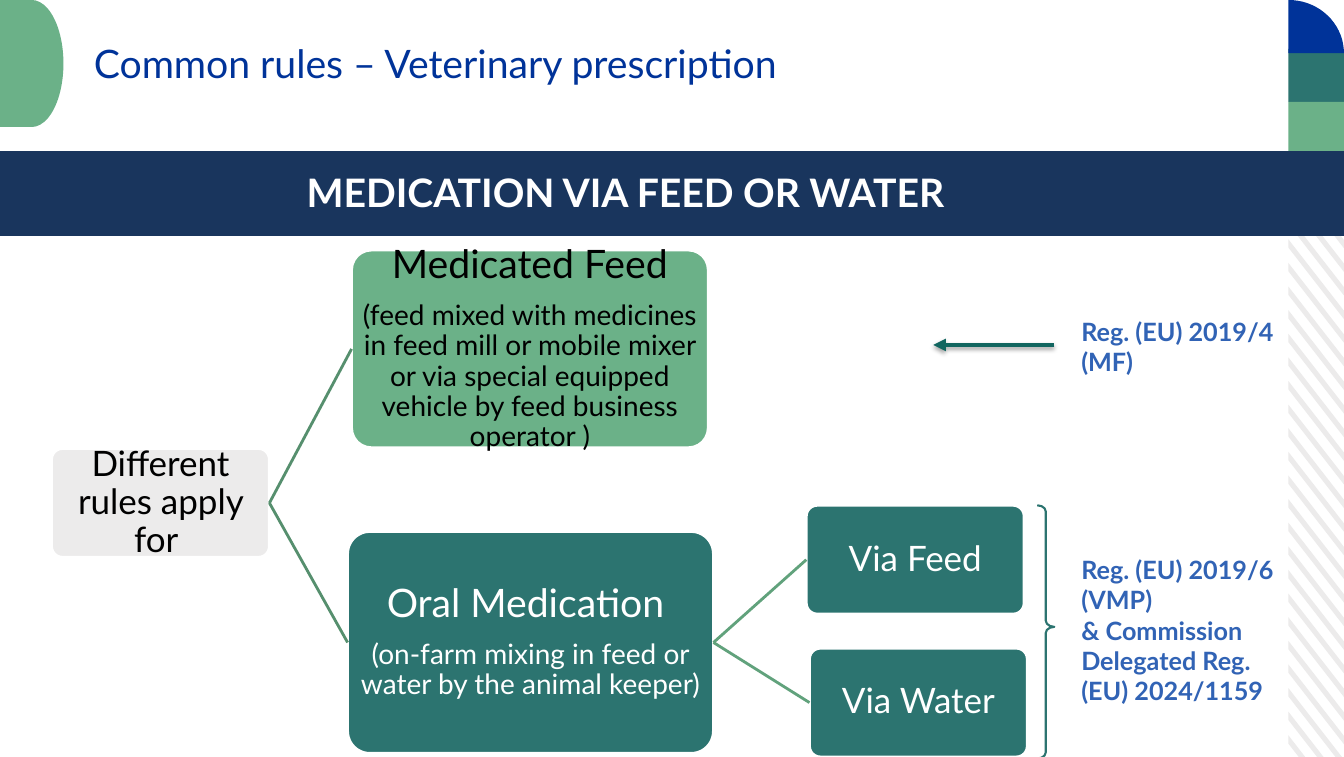
import math
from dataclasses import dataclass

from lxml import etree
from pptx import Presentation
from pptx import util as u
from pptx.dml.color import RGBColor
from pptx.enum import shapes, text
from pptx.oxml import parse_xml
from pptx.oxml.ns import nsdecls, qn

NAVY, BLUE, LINK_BLUE = "19355D", "003399", "3163B5"
TEAL, GREEN, GREY = "2C7470", "6BB188", "ECEBEB"
WHITE, BLACK = "FFFFFF", "000000"
WIDTH, HEIGHT = 33.87, 19.07
BANNER_TOP = 3.81
STRIP_LEFT, STRIP_WIDTH, TILE = 32.47, 1.4, 1.34
PRESET = shapes.MSO_SHAPE

Box = tuple[float, float, float, float]
Point = tuple[float, float]


@dataclass
class Node:
    box: Box
    fill: str
    ink: str
    lines: list[tuple[str, int]]


@dataclass
class Link:
    start: str
    end: str
    colour: str


@dataclass
class Label:
    box: Box
    lines: list[str]
    size: int
    colour: str
    align: text.PP_ALIGN = text.PP_ALIGN.LEFT


NODES = {
    "rules": Node((1.3, 11.3, 5.49, 2.74), GREY, BLACK,
                  [("Different rules apply for ", 25)]),
    "medicated": Node((8.86, 6.3, 8.99, 4.98), GREEN, BLACK, [
        ("Medicated Feed", 28),
        ("(feed mixed with medicines in feed mill or mobile mixer or via "
         "special equipped vehicle by feed business operator )", 20)]),
    "oral": Node((8.76, 13.39, 9.22, 5.59), TEAL, WHITE, [
        ("Oral Medication ", 28),
        ("(on-farm mixing in feed or water by the animal keeper)", 20)]),
    "feed": Node((20.32, 12.73, 5.49, 2.74), TEAL, WHITE, [("Via Feed", 25)]),
    "water": Node((20.4, 16.33, 5.49, 2.74), TEAL, WHITE, [("Via Water", 25)]),
}
LINKS = [
    Link("rules", "medicated", "568F6E"),
    Link("rules", "oral", "568F6E"),
    Link("oral", "feed", "61A27C"),
    Link("oral", "water", "61A27C"),
]
LABELS = [
    Label((5.18, 4.11, 21.16, 1.65), ["MEDICATION VIA FEED OR WATER"], 28, WHITE,
          text.PP_ALIGN.CENTER),
    Label((27, 7.85, 5.82, 1.8), ["Reg. (EU) 2019/4", "(MF)"], 18, LINK_BLUE),
    Label((27, 13.84, 5.46, 4.11),
          ["Reg. (EU) 2019/6 (VMP)", "& Commission Delegated Reg. (EU) 2024/1159"],
          18, LINK_BLUE),
]


def cm(values) -> list[u.Cm]:
    return [u.Cm(value) for value in values]


def apply(target, formats: dict) -> None:
    for name, value in formats.items():
        setattr(target, name, value)


def paint(fill, colour: str) -> None:
    fill.solid()
    fill.fore_color.rgb = RGBColor.from_string(colour)


def outline(line, colour: str, width: float) -> None:
    paint(line.fill, colour)
    line.width = u.Pt(width)


def write(frame, lines: list[tuple[str, int]], colour: str, align,
          bold: bool = False, spacing: dict | None = None) -> None:
    frame.word_wrap = True
    for index, (words, size) in enumerate(lines):
        paragraph = frame.add_paragraph() if index else frame.paragraphs[0]
        apply(paragraph, {"alignment": align, **(spacing or {})})
        if index == 0:
            paragraph.space_before = u.Pt(0)
        run = paragraph.add_run()
        run.text = words
        apply(run.font, {"name": "Lato", "size": u.Pt(size), "bold": bold})
        paint(run.font.fill, colour)


def preset(slide, kind, box: Box, fill: str | None, adjustments=()):
    part = slide.shapes.add_shape(kind, *cm(box))
    part.shadow.inherit = False
    for index, value in enumerate(adjustments):
        part.adjustments[index] = value
    if fill:
        paint(part.fill, fill)
    else:
        part.fill.background()
    part.line.fill.background()
    return part


def polygons(slide, contours: list[list[Point]], colour: str) -> None:
    builder = slide.shapes.build_freeform(*cm(contours[0][0]))
    for index, contour in enumerate(contours):
        if index:
            builder.move_to(*cm(contour[0]))
        builder.add_line_segments([tuple(cm(point)) for point in contour[1:]])
    part = builder.convert_to_shape()
    part.shadow.inherit = False
    paint(part.fill, colour)
    part.line.fill.background()


def stripe_edge(left_y: float) -> list[Point]:
    slope = 1.8 / STRIP_WIDTH
    top = BANNER_TOP + 0.1
    spans = [max((top - left_y) / slope, 0),
             min((HEIGHT - left_y) / slope, STRIP_WIDTH)]
    return [(STRIP_LEFT + span, left_y + slope * span) for span in spans]


def decorate(slide) -> None:
    starts = [2.46 + 0.595 * index for index in range(28)]
    polygons(slide, [stripe_edge(y) + stripe_edge(y + 0.21)[::-1] for y in starts], GREY)
    for row, colour in enumerate([TEAL, GREEN]):
        preset(slide, PRESET.RECTANGLE,
               (STRIP_LEFT, 1.23 + TILE * row, STRIP_WIDTH, TILE), colour)
    angles = [math.radians(degree) for degree in range(0, 91, 5)]
    arc = [(STRIP_LEFT + STRIP_WIDTH * math.sin(angle), TILE * (1 - math.cos(angle)))
           for angle in angles]
    polygons(slide, [[(STRIP_LEFT, TILE)] + arc], BLUE)
    preset(slide, PRESET.FLOWCHART_DELAY, (0, 0, 1.6, 3.2), GREEN)
    preset(slide, PRESET.ROUNDED_RECTANGLE, (-0.05, BANNER_TOP, 33.93, 2.13), NAVY, [0])


def draw_node(slide, node: Node):
    part = preset(slide, PRESET.ROUNDED_RECTANGLE, node.box, node.fill, [0.1])
    outline(part.line, WHITE, 2)
    sides = ("left", "top", "right", "bottom")
    apply(part.text_frame, {f"margin_{side}": u.Cm(0.05) for side in sides})
    part.text_frame.vertical_anchor = text.MSO_ANCHOR.MIDDLE
    write(part.text_frame, node.lines, node.ink, text.PP_ALIGN.CENTER,
          spacing={"line_spacing": 0.9, "space_before": u.Pt(10)})
    return part


def draw_line(slide, start: Point, end: Point, colour: str, width: float):
    line = slide.shapes.add_connector(shapes.MSO_CONNECTOR.STRAIGHT, *cm(start + end))
    outline(line.line, colour, width)
    effects = etree.SubElement(line._element.spPr, qn("a:effectLst"))
    return line, effects


def draw_arrow(slide) -> None:
    arrow, effects = draw_line(slide, (26.57, 8.69), (23.52, 8.69), "126660", 3)
    etree.SubElement(arrow.line._get_or_add_ln(), qn("a:tailEnd"), type="triangle")
    effects.append(parse_xml(
        f'<a:outerShdw {nsdecls("a")} blurRad="40000" dist="23000" dir="5400000" '
        'rotWithShape="0"><a:srgbClr val="000000"><a:alpha val="35000"/>'
        '</a:srgbClr></a:outerShdw>'))


def main() -> None:
    deck = Presentation()
    apply(deck, {"slide_width": u.Cm(WIDTH), "slide_height": u.Cm(HEIGHT)})
    slide = deck.slides.add_slide(deck.slide_layouts[5])
    decorate(slide)

    title = slide.shapes.title
    apply(title, dict(zip(("left", "top", "width", "height"),
                          cm((2.11, 0.86, 22.25, 1.47)))))
    apply(title.text_frame, {"auto_size": text.MSO_AUTO_SIZE.NONE,
                             "vertical_anchor": text.MSO_ANCHOR.TOP})
    write(title.text_frame, [("Common rules – Veterinary prescription", 28)], BLUE,
          text.PP_ALIGN.LEFT)

    nodes = {name: draw_node(slide, node) for name, node in NODES.items()}
    for link in LINKS:
        line, _ = draw_line(slide, (0, 0), (1, 1), link.colour, 2)
        line.begin_connect(nodes[link.start], 3)
        line.end_connect(nodes[link.end], 1)

    for label in LABELS:
        frame = slide.shapes.add_textbox(*cm(label.box)).text_frame
        write(frame, [(words, label.size) for words in label.lines], label.colour,
              label.align, bold=True)

    draw_arrow(slide)
    brace = preset(slide, PRESET.RIGHT_BRACE, (26.14, 12.73, 0.43, 6.38), None,
                   [0.36, 0.48])
    outline(brace.line, TEAL, 1.5)
    deck.save("out.pptx")


if __name__ == "__main__":
    main()
